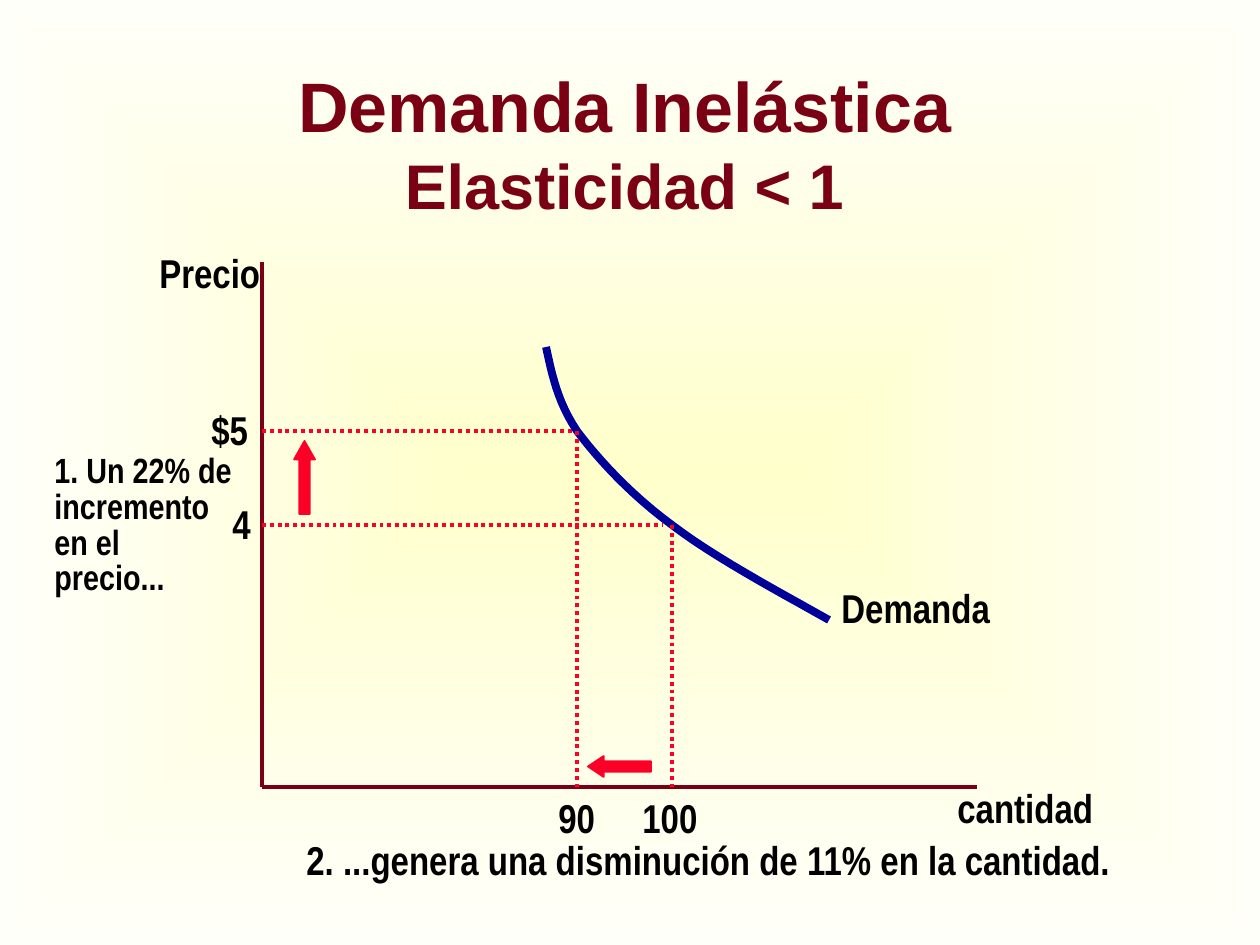
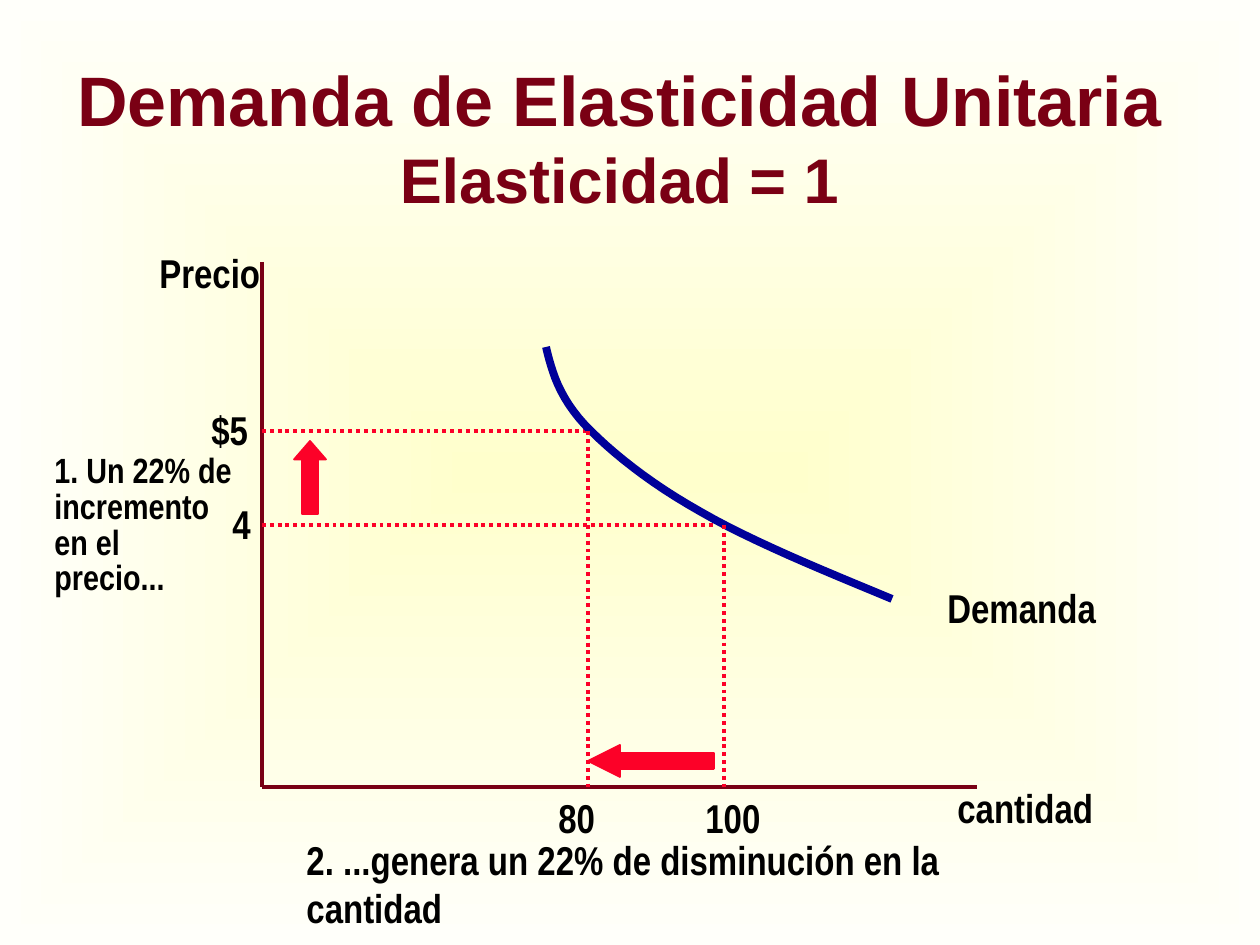
from dataclasses import dataclass

from lxml import etree
from pptx import Presentation
from pptx.dml.color import RGBColor
from pptx.enum.dml import MSO_LINE
from pptx.enum.shapes import MSO_CONNECTOR, MSO_SHAPE
from pptx.enum.text import MSO_ANCHOR, PP_ALIGN
from pptx.oxml.ns import qn
from pptx.util import Emu, Pt

STRAIGHT = MSO_CONNECTOR.STRAIGHT
UP_ARROW, LEFT_ARROW = MSO_SHAPE.UP_ARROW, MSO_SHAPE.LEFT_ARROW
DOTTED = MSO_LINE.ROUND_DOT
LEFT, CENTER = PP_ALIGN.LEFT, PP_ALIGN.CENTER
TOP, MIDDLE = MSO_ANCHOR.TOP, MSO_ANCHOR.MIDDLE

PX_PER_INCH = 126
BLANK_LAYOUT = 6
CURVE_STEPS = 12


@dataclass(frozen=True)
class Theme:
    glow: str = "FFFFCC"
    paper: str = "FFFFFA"
    title: str = "7A0014"
    axis: str = "790015"
    accent: str = "FC0128"
    curve: str = "000099"
    ink: str = "000000"
    title_font: str = "Arial"
    label_font: str = "Arial Narrow"
    title_size: int = 40
    subtitle_size: int = 36
    label_size: int = 23
    note_size: int = 20
    thin: float = 1
    line: float = 2.25
    bold_line: float = 4.5


THEME = Theme()


@dataclass(frozen=True)
class Box:
    left: int
    top: int
    width: int
    height: int


@dataclass(frozen=True)
class Case:
    """One demand example; lengths are px from the top left of its plot."""
    title: tuple
    title_box: Box
    curve: tuple
    curve_label_x: int
    quantities: tuple  # (text, guide x, label x) at the high and low price
    caption: str
    caption_width: int
    arrow_thickness: int
    quantity_arrow_length: int
    quantity_arrow_head: float


PLOT = Box(262, 262, 715, 525)
PRICES = (("$5", 169, -63, 62), ("4", 263, -42, 44))
PRICE_NOTE = ("1. Un 22% de", "incremento", "en el precio...")

CASES = (
    Case(
        title=("Demanda Inelástica", "Elasticidad < 1"),
        title_box=Box(42, 63, 1165, 158),
        curve=((284, 85), (290, 112), (295, 139), (315, 169), (337, 198),
               (368, 232), (410, 263), (452, 295), (510, 326), (567, 358)),
        curve_label_x=567,
        quantities=(("90", 315, 284), ("100", 410, 368)),
        caption="2. ...genera una disminución de 11% en la cantidad.",
        caption_width=832,
        arrow_thickness=21,
        quantity_arrow_length=63,
        quantity_arrow_head=0.75,
    ),
    Case(
        title=("Demanda de Elasticidad Unitaria", "Elasticidad = 1"),
        title_box=Box(42, 63, 1155, 147),
        curve=((284, 85), (290, 110), (297, 135), (323, 163), (348, 189),
               (387, 221), (439, 250), (489, 279), (560, 308), (630, 337)),
        curve_label_x=673,
        quantities=(("80", 326, 284), ("100", 462, 431)),
        caption="2. ...genera un 22% de disminución en la cantidad",
        caption_width=800,
        arrow_thickness=32,
        quantity_arrow_length=126,
        quantity_arrow_head=1,
    ),
)


def px(length):
    return Emu(round(length * 914400 / PX_PER_INCH))


def rgb(code):
    return RGBColor.from_string(code)


def add_text(slide, box, paragraphs, *, sizes=(THEME.label_size,),
             font=THEME.label_font, color=THEME.ink, align=LEFT, anchor=TOP,
             spacing=None, wrap=False):
    """Each paragraph is a tuple of lines; sizes apply line by line."""
    frame = slide.shapes.add_textbox(
        px(box.left), px(box.top), px(box.width), px(box.height)).text_frame
    frame.word_wrap = wrap
    frame.vertical_anchor = anchor
    for index, lines in enumerate(paragraphs):
        paragraph = frame.add_paragraph() if index else frame.paragraphs[0]
        paragraph.alignment = align
        paragraph.line_spacing = spacing
        for number, (line, size) in enumerate(zip(lines, sizes)):
            if number:
                paragraph.add_line_break()
            run = paragraph.add_run()
            run.text = line
            run.font.name = font
            run.font.size = Pt(size)
            run.font.bold = True
            run.font.color.rgb = rgb(color)


def add_line(slide, start, end, color, dash=None):
    line = slide.shapes.add_connector(STRAIGHT, *map(px, start + end))
    line.line.color.rgb = rgb(color)
    line.line.width = Pt(THEME.line)
    if dash:
        line.line.dash_style = dash
    etree.SubElement(line.element.spPr, qn("a:effectLst"))


def add_arrow(slide, kind, box, head):
    arrow = slide.shapes.add_shape(
        kind, px(box.left), px(box.top), px(box.width), px(box.height))
    arrow.shadow.inherit = False
    arrow.adjustments[0] = 0.5
    arrow.adjustments[1] = head
    arrow.fill.solid()
    arrow.fill.fore_color.rgb = rgb(THEME.accent)
    arrow.line.color.rgb = rgb(THEME.accent)
    arrow.line.width = Pt(THEME.thin)


def bezier_points(knots):
    """Sample a chain of cubic segments that share their end knots."""
    points = [knots[0]]
    for first in range(0, len(knots) - 1, 3):
        segment = knots[first:first + 4]
        for step in range(1, CURVE_STEPS + 1):
            t = step / CURVE_STEPS
            u = 1 - t
            weights = (u ** 3, 3 * u * u * t, 3 * u * t * t, t ** 3)
            points.append(tuple(
                sum(w * knot[axis] for w, knot in zip(weights, segment))
                for axis in (0, 1)))
    return points


def add_curve(slide, knots):
    points = [(px(x), px(y)) for x, y in bezier_points(knots)]
    builder = slide.shapes.build_freeform(*points[0])
    builder.add_line_segments(points[1:], close=False)
    curve = builder.convert_to_shape()
    curve.shadow.inherit = False
    curve.fill.background()
    curve.line.color.rgb = rgb(THEME.curve)
    curve.line.width = Pt(THEME.bold_line)


def set_background(master):
    """Glow from the centre of the slide to its edges."""
    fill = master.background.fill
    fill.gradient()
    for stop, color in zip(fill.gradient_stops, (THEME.glow, THEME.paper)):
        stop.color.rgb = rgb(color)
    linear = master.element.cSld.find(".//" + qn("a:lin"))
    gradient = linear.getparent()
    gradient.remove(linear)
    radial = etree.SubElement(gradient, qn("a:path"), {"path": "shape"})
    etree.SubElement(radial, qn("a:fillToRect"),
                     dict.fromkeys(("l", "t", "r", "b"), "50000"))


def add_title(slide, box, lines):
    add_text(slide, box, [lines], sizes=(THEME.title_size, THEME.subtitle_size),
             font=THEME.title_font, color=THEME.title, align=CENTER,
             anchor=MIDDLE, wrap=True)


def add_plot(slide, box, case):
    def at(x, y):
        return box.left + x, box.top + y

    def label(text, x, y, width, wrap=False):
        add_text(slide, Box(*at(x, y), width, 60), [(text,)], wrap=wrap)

    origin = at(0, box.height)
    add_line(slide, at(0, 0), origin, THEME.axis)
    add_line(slide, origin, at(box.width, box.height), THEME.axis)
    label("cantidad", box.width - 32, box.height - 10, 161)
    label("Precio", -115, -20, 126)

    guide_ends = (case.quantities[0][1], case.quantities[1][1] - 10)
    for (price, y, x, width), end in zip(PRICES, guide_ends):
        label(price, x, y - 32, width)
        add_line(slide, at(0, y), at(end, y), THEME.accent, DOTTED)

    add_curve(slide, [at(*knot) for knot in case.curve])
    label("Demanda", case.curve_label_x, 315, 174)

    for (quantity, x, label_x), price in zip(case.quantities, PRICES):
        add_line(slide, at(x, price[1]), at(x, box.height),
                 THEME.accent, DOTTED)
        label(quantity, label_x, box.height, 27 + 18 * len(quantity))

    add_text(slide, Box(*at(-220, 187), 204, 150),
             [(line,) for line in PRICE_NOTE], sizes=(THEME.note_size,),
             spacing=0.85, wrap=True)
    label(case.caption, 32, box.height + 42, case.caption_width, wrap=True)

    thickness = case.arrow_thickness
    add_arrow(slide, UP_ARROW, Box(*at(32, 179), thickness, 73),
              18.5 / thickness)
    add_arrow(slide, LEFT_ARROW,
              Box(*at(326, box.height - 10 - thickness),
                  case.quantity_arrow_length, thickness),
              case.quantity_arrow_head)


def main():
    deck = Presentation()
    deck.slide_width, deck.slide_height = px(1260), px(945)
    set_background(deck.slide_master)
    for case in CASES:
        slide = deck.slides.add_slide(deck.slide_layouts[BLANK_LAYOUT])
        add_title(slide, case.title_box, case.title)
        add_plot(slide, PLOT, case)
    deck.save("out.pptx")


if __name__ == "__main__":
    main()
